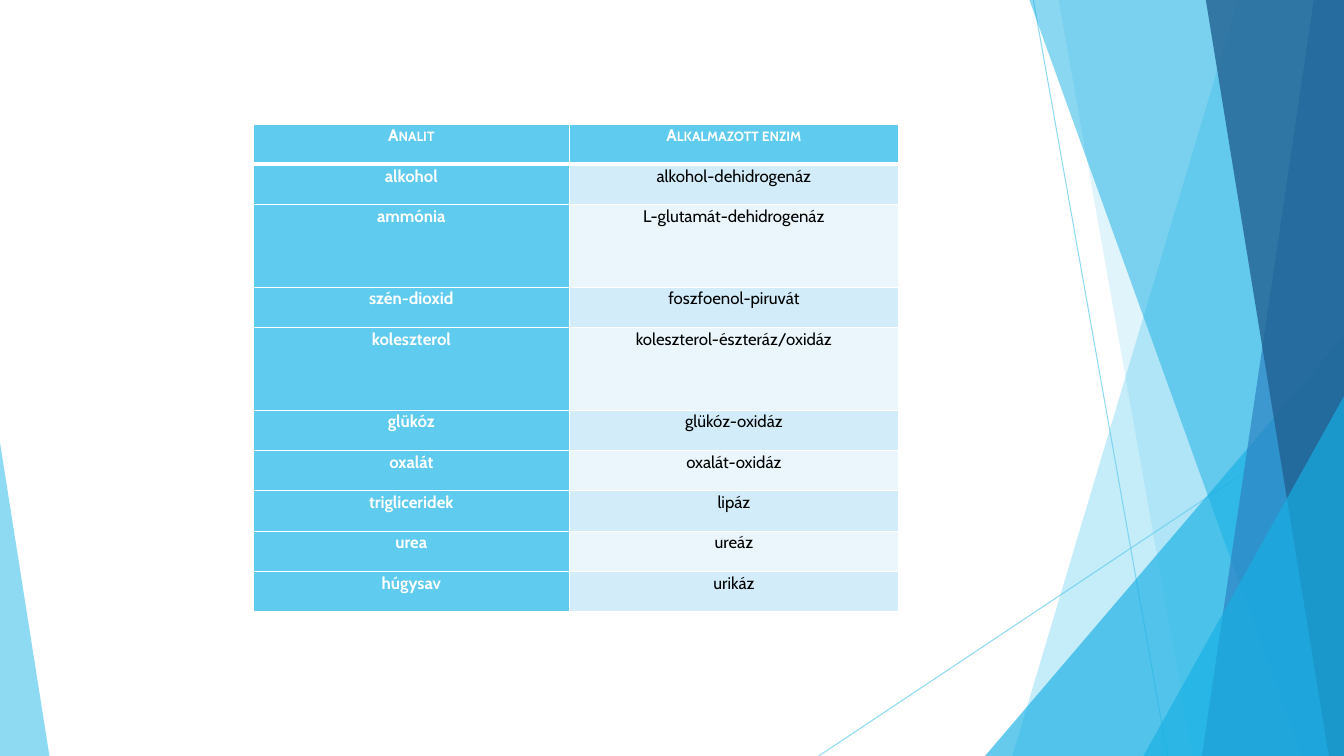
from lxml.etree import SubElement
from pptx import Presentation
from pptx.dml.color import RGBColor
from pptx.enum.shapes import MSO_CONNECTOR, MSO_SHAPE
from pptx.enum.text import PP_ALIGN
from pptx.oxml.ns import qn
from pptx.util import Inches, Pt

SKY = RGBColor(0x5F, 0xCB, 0xEF)
CYAN = RGBColor(0x17, 0xB0, 0xE4)
BLUE = RGBColor(0x2E, 0x83, 0xC3)
NAVY = RGBColor(0x22, 0x62, 0x92)
BAND_DARK = RGBColor(0xD2, 0xEC, 0xF9)
BAND_LIGHT = RGBColor(0xEA, 0xF6, 0xFC)
WHITE = RGBColor(0xFF, 0xFF, 0xFF)
BLACK = RGBColor(0x00, 0x00, 0x00)

FONT = "Cabin"
ROWS = [
    ("Analit", "Alkalmazott enzim"),
    ("alkohol", "alkohol-dehidrogenáz"),
    ("ammónia", "L-glutamát-dehidrogenáz"),
    ("szén-dioxid", "foszfoenol-piruvát"),
    ("koleszterol", "koleszterol-észteráz/oxidáz"),
    ("glükóz", "glükóz-oxidáz"),
    ("oxalát", "oxalát-oxidáz"),
    ("trigliceridek", "lipáz"),
    ("urea", "ureáz"),
    ("húgysav", "urikáz"),
]
TALL_ROWS = ("ammónia", "koleszterol")


def set_opacity(shape, percent):
    for color in shape.element.spPr.iter(qn("a:srgbClr")):
        SubElement(color, qn("a:alpha"), val=str(percent * 1000))


def paint(shape, color, opacity):
    shape.shadow.inherit = False
    shape.line.fill.background()
    shape.fill.solid()
    shape.fill.fore_color.rgb = color
    set_opacity(shape, opacity)


def add_ray(page, start, end):
    ray = page.shapes.add_connector(
        MSO_CONNECTOR.STRAIGHT, *(Inches(value) for value in start + end))
    ray.line.color.rgb = SKY
    ray.line.width = Pt(0.75)
    set_opacity(ray, 70)
    SubElement(ray.element.spPr, qn("a:effectLst"))


def add_ribbon(page, corners, color, opacity):
    points = [(Inches(x), Inches(y)) for x, y in corners]
    builder = page.shapes.build_freeform(*points[0])
    builder.add_line_segments(points[1:], close=True)
    paint(builder.convert_to_shape(), color, opacity)


def add_triangle(page, left, top, width, height, apex, color, opacity):
    triangle = page.shapes.add_shape(
        MSO_SHAPE.ISOSCELES_TRIANGLE,
        Inches(left), Inches(top), Inches(width), Inches(height))
    triangle.adjustments[0] = apex
    paint(triangle, color, opacity)


def add_facets(page, left, top, width, height):
    right, bottom = left + width, top + height

    def ribbon(upper, lower, color, opacity):
        corners = [(left + upper, top), (right, top),
                   (right, bottom), (left + lower, bottom)]
        add_ribbon(page, corners, color, opacity)

    def corner(offset, drop):
        add_triangle(page, left + offset, top + drop, width - offset,
                     height - drop, 1, CYAN, 66)

    add_ray(page, (left + 2.13, top), (left + 3.46, bottom))
    add_ray(page, (right, top + 4.03), (left, bottom))
    ribbon(4.16, 1.92, SKY, 36)
    ribbon(2.38, 3.71, SKY, 20)
    corner(1.65, 3.33)
    ribbon(2.09, 4.79, CYAN, 50)
    ribbon(4.91, 3.80, BLUE, 70)
    ribbon(3.84, 5.06, NAVY, 80)
    corner(3.22, 3.93)


def add_borders(cell, bottom_width):
    properties = cell._tc.get_or_add_tcPr()
    for side, width in (("L", 1), ("R", 1), ("T", 1), ("B", bottom_width)):
        border = SubElement(properties, qn(f"a:ln{side}"), w=str(Pt(width)))
        fill = SubElement(border, qn("a:solidFill"))
        SubElement(fill, qn("a:srgbClr"), val=str(WHITE))


def fill_cell(cell, text, row, column):
    header = row == 0
    strong = header or column == 0
    add_borders(cell, 3 if header else 1)
    cell.fill.solid()
    band = BAND_DARK if row % 2 else BAND_LIGHT
    cell.fill.fore_color.rgb = SKY if strong else band
    cell.margin_left = cell.margin_right = Inches(0.07)
    cell.margin_top = cell.margin_bottom = 0
    para = cell.text_frame.paragraphs[0]
    para.alignment = PP_ALIGN.CENTER
    para.line_spacing = 1.07
    para.space_after = Pt(12)
    span = para.add_run()
    span.text = text
    span.font.name = FONT
    span.font.size = Pt(12)
    span.font.bold = strong
    span.font.color.rgb = WHITE if strong else BLACK
    if header:
        span._r.get_or_add_rPr().set("cap", "small")


def add_enzyme_table(page, left, top, width, height):
    frame = page.shapes.add_table(
        len(ROWS), 2, Inches(left), Inches(top), Inches(width), Inches(height))
    table = frame.table
    table.columns[0].width = Inches(3.14)
    table.columns[1].width = Inches(width - 3.14)
    for row, texts in enumerate(ROWS):
        table.rows[row].height = Inches(0.82 if texts[0] in TALL_ROWS else 0.4)
        for column, text in enumerate(texts):
            fill_cell(table.cell(row, column), text, row, column)
            if row == 1:
                top_border = table.cell(row, column)._tc.tcPr.find(qn("a:lnT"))
                top_border.set("w", str(Pt(3)))


def main():
    deck = Presentation()
    deck.slide_width = Inches(13.33)
    deck.slide_height = Inches(7.5)
    page = deck.slides.add_slide(deck.slide_layouts[6])
    add_facets(page, 8.12, 0, 5.21, 7.5)
    add_triangle(page, 0, 4.39, 0.49, 3.11, 0, SKY, 70)
    add_enzyme_table(page, 2.51, 1.23, 6.4, 4.84)
    deck.save("out.pptx")


if __name__ == "__main__":
    main()
